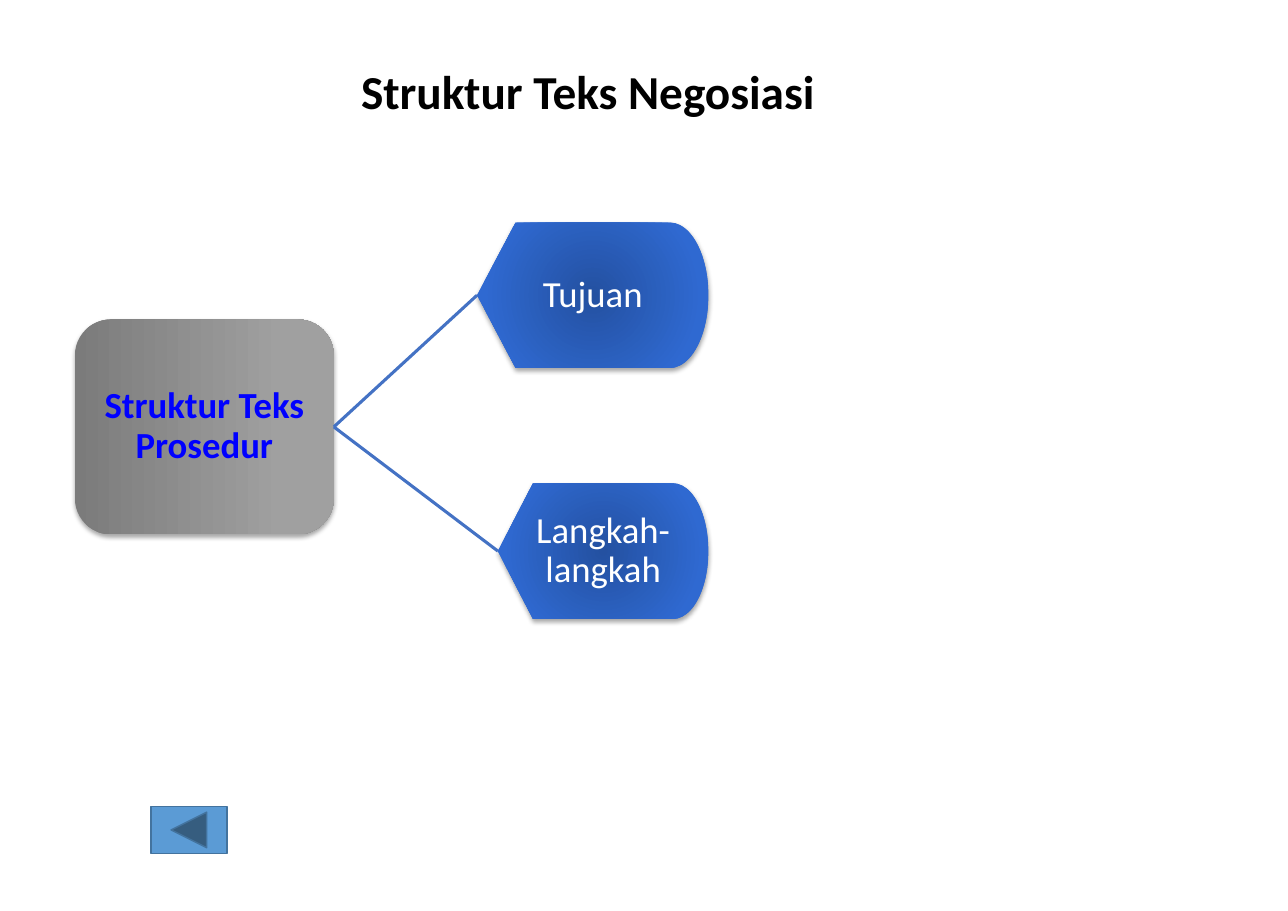
from lxml import etree
from pptx import Presentation
from pptx.dml.color import RGBColor
from pptx.enum.shapes import MSO_CONNECTOR, MSO_SHAPE
from pptx.enum.text import MSO_ANCHOR, PP_ALIGN
from pptx.oxml import parse_xml
from pptx.oxml.ns import qn
from pptx.util import Inches, Pt

ROUNDED = MSO_SHAPE.FLOWCHART_ALTERNATE_PROCESS
DISPLAY = MSO_SHAPE.FLOWCHART_DISPLAY
BACK = MSO_SHAPE.ACTION_BUTTON_BACK_OR_PREVIOUS
STRAIGHT = MSO_CONNECTOR.STRAIGHT
MIDDLE = MSO_ANCHOR.MIDDLE
CENTER = PP_ALIGN.CENTER
LEFT_SITE, RIGHT_SITE = 1, 3
NS = "http://schemas.openxmlformats.org/drawingml/2006/main"

WIDTH, HEIGHT = Inches(11.69), Inches(8.27)
TITLE = ("Struktur Teks Negosiasi", (13.94, 6.29, 63.39, 7.5))
ROOT = ("Struktur Teks Prosedur", (5.82, 35.07, 20.1, 23.58))
BRANCH_RIGHT = 55
BRANCHES = [
    ("Tujuan", 32.41, 17.96, 15.96),
    ("Langkah-langkah", 60.5, 16.34, 14.87),
]
BUTTON = (11.72, 88.51, 5.9, 5.2)
GREYS = [(0, "7B7B7B"), (80, "A0A0A0"), (100, "A1A1A1")]
BLUES = [(0, "2451A1"), (80, "2F69D1"), (100, "2C69D5")]
LINEAR = '<a:lin ang="0" scaled="0"/>'
RADIAL = ('<a:path path="circle"><a:fillToRect l="50000" t="50000" '
          'r="50000" b="50000"/></a:path>')


def rgb(color):
    return RGBColor.from_string(color)


def place(box):
    x, y, w, h = box
    return [int(share * side / 100)
            for share, side in ((x, WIDTH), (y, HEIGHT), (w, WIDTH), (h, HEIGHT))]


def write(sp, text, size, color, bold):
    tf = sp.text_frame
    tf.word_wrap = True
    p = tf.paragraphs[0]
    p.text = text
    p.alignment = CENTER
    p.font.name = "Calibri"
    p.font.size = Pt(size)
    p.font.bold = bold
    p.font.color.rgb = rgb(color)
    return tf


def add_node(kind, text, box, stops, direction, color, bold):
    sp = slide.shapes.add_shape(kind, *place(box))
    sp.line.fill.background()
    sp.shadow.inherit = False
    colors = "".join(
        f'<a:gs pos="{pos * 1000}"><a:srgbClr val="{c}"/></a:gs>' for pos, c in stops)
    spPr = sp._element.spPr
    spPr.find(qn("a:ln")).addprevious(parse_xml(
        f'<a:gradFill xmlns:a="{NS}" rotWithShape="1">'
        f'<a:gsLst>{colors}</a:gsLst>{direction}</a:gradFill>'))
    spPr.find(qn("a:effectLst")).append(parse_xml(
        f'<a:outerShdw xmlns:a="{NS}" blurRad="{Pt(3.1)}" dist="{Pt(1.8)}" '
        'dir="5400000" rotWithShape="0"><a:srgbClr val="000000">'
        '<a:alpha val="35000"/></a:srgbClr></a:outerShdw>'))
    tf = write(sp, text, 24, color, bold)
    tf.vertical_anchor = MIDDLE
    tf.margin_left = tf.margin_right = tf.margin_top = tf.margin_bottom = 0
    tf.paragraphs[0].line_spacing = 0.9
    return sp


def link(start, end):
    line = slide.shapes.add_connector(STRAIGHT, 0, 0, 0, 0)
    line.begin_connect(start, RIGHT_SITE)
    line.end_connect(end, LEFT_SITE)
    line.line.color.rgb = rgb("4472C4")
    line.line.width = Pt(2)
    etree.SubElement(line._element.spPr, qn("a:effectLst"))


prs = Presentation()
prs.slide_width, prs.slide_height = WIDTH, HEIGHT
slide = prs.slides.add_slide(prs.slide_layouts[6])

root = add_node(ROUNDED, *ROOT, GREYS, LINEAR, "0000FF", True)
for text, middle, w, h in BRANCHES:
    box = (BRANCH_RIGHT - w, middle - h / 2, w, h)
    link(root, add_node(DISPLAY, text, box, BLUES, RADIAL, "FFFFFF", False))

title, box = TITLE
write(slide.shapes.add_textbox(*place(box)), title, 30.9, "000000", True)

button = slide.shapes.add_shape(BACK, *place(BUTTON))
button.shadow.inherit = False
button.fill.solid()
button.fill.fore_color.rgb = rgb("5B9BD5")
button.line.color.rgb = rgb("43739E")
button.line.width = Pt(1)

prs.save("out.pptx")
